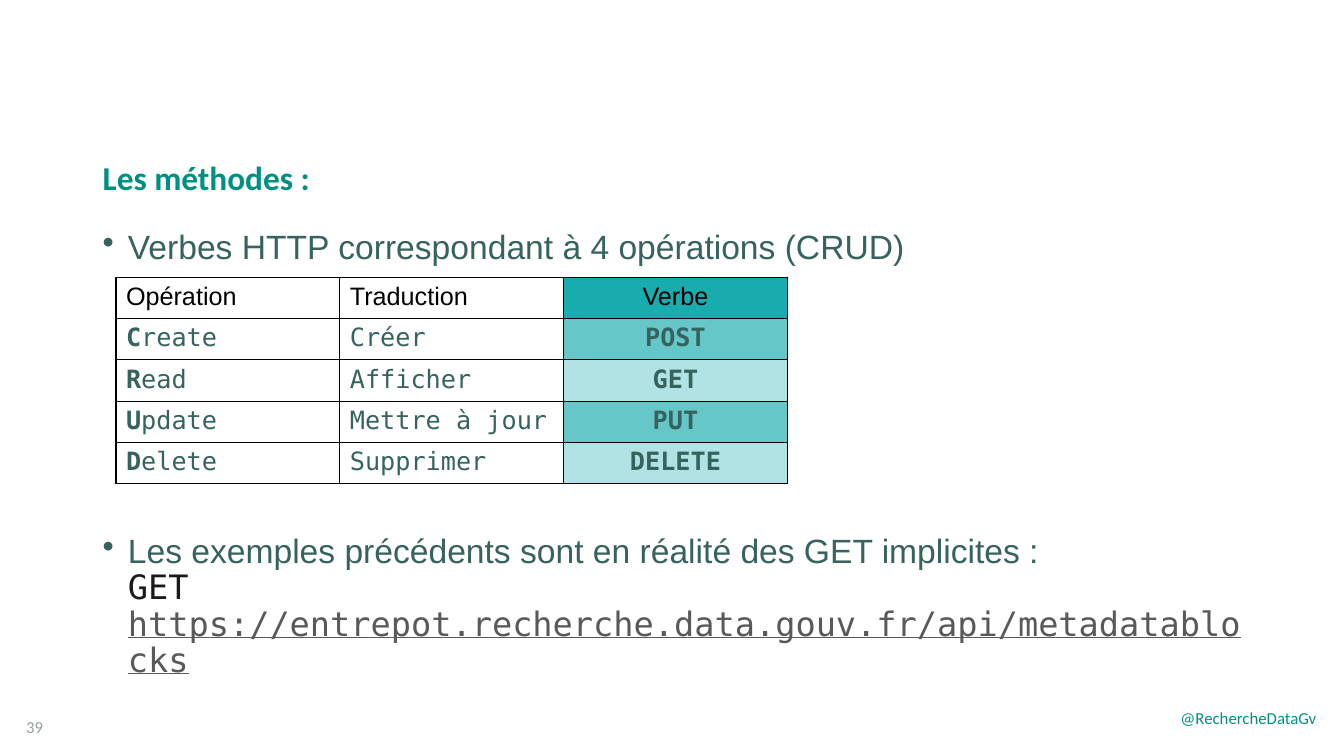
import pptx
import pptx.dml.color
import pptx.enum.text
import pptx.oxml
import pptx.oxml.ns
import pptx.util

Inches = pptx.util.Inches
Pt = pptx.util.Pt
RGBColor = pptx.dml.color.RGBColor
qn = pptx.oxml.ns.qn
ALIGN = pptx.enum.text.PP_ALIGN
ANCHOR = pptx.enum.text.MSO_ANCHOR

GREEN = RGBColor(0x00, 0x90, 0x81)
SLATE = RGBColor(0x37, 0x63, 0x5F)
GREY = RGBColor(0x91, 0x9F, 0x9D)
LINK = RGBColor(0x59, 0x59, 0x59)
INK = RGBColor(0x1A, 0x1A, 0x1A)
BLACK = RGBColor(0x00, 0x00, 0x00)
TEAL = RGBColor(0x00, 0xA3, 0xA6)

NOTE = {"name": "Calibri", "size": Pt(12)}
HEADING = {"name": "Calibri", "size": Pt(23.8), "bold": True}
BODY = {"name": "Arial", "size": Pt(24), "bold": False}
CODE = BODY | {"name": "DejaVu Sans Mono"}
HEADER_CELL = BODY | {"size": Pt(18)}
CODE_CELL = CODE | {"size": Pt(18)}
INITIAL = CODE_CELL | {"bold": True}


class SlideBuilder:
    def __init__(self, slide):
        self.slide = slide

    def run(self, paragraph, text, style, color):
        run = paragraph.add_run()
        run.text = text
        for attribute, value in style.items():
            setattr(run.font, attribute, value)
        run.font.color.rgb = color

    def box(self, left, top, width, height, anchor=ANCHOR.TOP):
        frame = self.slide.shapes.add_textbox(
            Inches(left), Inches(top), Inches(width), Inches(height)).text_frame
        frame.word_wrap = True
        frame.vertical_anchor = anchor
        return frame

    def label(self, text, place, style, color, anchor=ANCHOR.TOP, spacing=1.0):
        paragraph = self.box(*place, anchor).paragraphs[0]
        paragraph.line_spacing = spacing
        self.run(paragraph, text, style, color)

    def bullet(self, paragraph, text):
        properties = paragraph._p.get_or_add_pPr()
        indent = Inches(0.25)
        properties.set("marL", str(indent))
        properties.set("indent", str(-indent))
        mark = pptx.oxml.parse_xml(
            f'<a:buChar {pptx.oxml.ns.nsdecls("a")} char="•"/>')
        properties.append(mark)
        paragraph.line_spacing = 0.9
        self.run(paragraph, text, BODY, SLATE)

    def table(self, rows, left, top, column_width, row_height):
        columns = len(rows[0])
        table = self.slide.shapes.add_table(
            len(rows), columns, Inches(left), Inches(top),
            Inches(column_width * columns), Inches(row_height * len(rows))).table
        table.first_row = table.horz_banding = False
        return table

    def cell(self, cell, runs, opacity=None):
        properties = cell._tc.get_or_add_tcPr()
        for side in ("lnL", "lnR", "lnT", "lnB"):
            properties.append(pptx.oxml.parse_xml(
                f'<a:{side} {pptx.oxml.ns.nsdecls("a")} w="{Pt(1)}"><a:solidFill>'
                f'<a:srgbClr val="{BLACK}"/></a:solidFill></a:{side}>'))
        paragraph = cell.text_frame.paragraphs[0]
        if opacity is None:
            cell.fill.background()
        else:
            paragraph.alignment = ALIGN.CENTER
            cell.fill.solid()
            cell.fill.fore_color.rgb = TEAL
            color = properties.find(qn("a:solidFill")).find(qn("a:srgbClr"))
            color.append(pptx.oxml.parse_xml(
                f'<a:alpha {pptx.oxml.ns.nsdecls("a")} val="{opacity * 1000}"/>'))
        for text, style, color in runs:
            self.run(paragraph, text, style, color)


def main():
    presentation = pptx.Presentation()
    presentation.slide_width = Inches(13.33)
    presentation.slide_height = Inches(7.5)
    builder = SlideBuilder(
        presentation.slides.add_slide(presentation.slide_layouts[6]))

    # Footer and heading
    builder.label("@RechercheDataGv", (11.61, 6.97, 1.62, 0.5), NOTE, GREEN)
    builder.label("39", (0.16, 7.01, 0.65, 0.4), NOTE, GREY, ANCHOR.MIDDLE)
    builder.label("Les méthodes :", (0.92, 1.62, 5.39, 0.4), HEADING, GREEN,
                  spacing=0.7)

    # Bullets, with room for the table between them
    body = builder.box(0.92, 2.24, 11.51, 4.58)
    builder.bullet(body.paragraphs[0],
                   "Verbes HTTP correspondant à 4 opérations (CRUD)")
    example = body.add_paragraph()
    example.space_before = Pt(191)
    builder.bullet(example,
                   "Les exemples précédents sont en réalité des GET implicites :")
    example.add_line_break()
    builder.run(example, "GET ", CODE, INK)
    builder.run(example,
                "https://entrepot.recherche.data.gouv.fr/api/metadatablocks",
                CODE | {"underline": True}, LINK)

    # CRUD table
    operations = [
        ("Opération", "Traduction", "Verbe"),
        ("Create", "Créer", "POST"),
        ("Read", "Afficher", "GET"),
        ("Update", "Mettre à jour", "PUT"),
        ("Delete", "Supprimer", "DELETE"),
    ]
    crud = builder.table(operations, 1.15, 2.75, 2.22, 0.41)
    for row, (operation, translation, verb) in enumerate(operations):
        if row == 0:
            contents = [[(text, HEADER_CELL, BLACK)] for text in operations[0]]
            opacity = 90
        else:
            contents = [
                [(operation[0], INITIAL, SLATE), (operation[1:], CODE_CELL, SLATE)],
                [(translation, CODE_CELL, SLATE)],
                [(verb, INITIAL, SLATE)],
            ]
            opacity = 60 if row % 2 else 30
        for column, runs in enumerate(contents):
            builder.cell(crud.cell(row, column), runs,
                         opacity if column == 2 else None)

    presentation.save("out.pptx")


if __name__ == "__main__":
    main()
